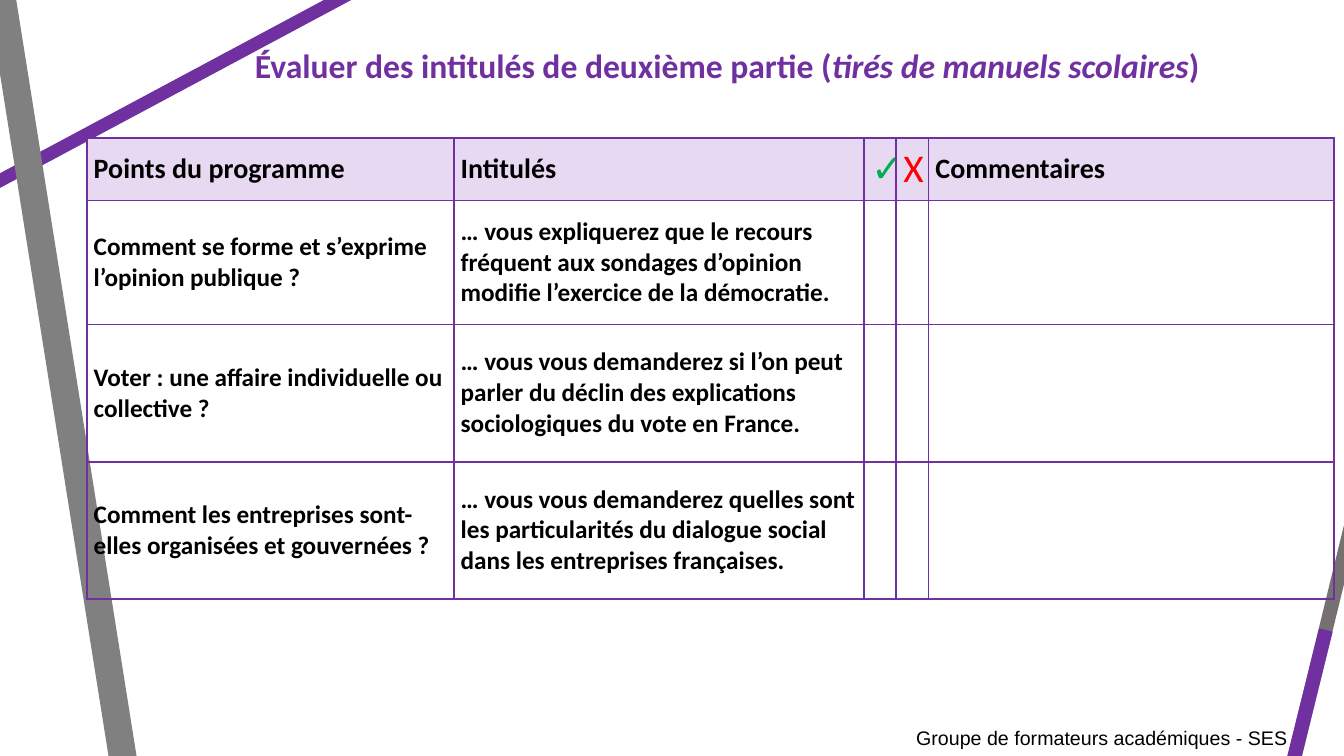
from lxml import etree
from pptx import Presentation
from pptx import util as u
from pptx.dml.color import RGBColor
from pptx.enum import shapes, text
from pptx.oxml import ns

PURPLE = RGBColor(0x70, 0x30, 0xA0)
LILAC = RGBColor(0xE8, 0xD9, 0xF3)
GREY = RGBColor(0x80, 0x80, 0x80)
DARK_GREY = RGBColor(0x76, 0x71, 0x71)
BLACK = RGBColor(0, 0, 0)
GREEN = RGBColor(0x00, 0xB0, 0x50)
RED = RGBColor(0xFF, 0, 0)

TITLE = [
    ("Évaluer des intitulés de deuxième partie (", False),
    ("tirés de manuels scolaires", True),
    (")", False),
]
FOOTER = "Groupe de formateurs académiques - SES"
HEADERS = ["Points du programme", "Intitulés", "✓", "X", "Commentaires"]
ROWS = [
    ("Comment se forme et s’exprime l’opinion publique ?",
     "… vous expliquerez que le recours fréquent aux sondages d’opinion "
     "modifie l’exercice de la démocratie."),
    ("Voter : une affaire individuelle ou collective ?",
     "… vous vous demanderez si l’on peut parler du déclin des explications "
     "sociologiques du vote en France."),
    ("Comment les entreprises sont-elles organisées et gouvernées ?",
     "… vous vous demanderez quelles sont les particularités du dialogue social "
     "dans les entreprises françaises."),
]
MARKS = {
    "✓": dict(size=28, color=GREEN, align=text.PP_ALIGN.CENTER),
    "X": dict(size=28, color=RED, bold=False, align=text.PP_ALIGN.CENTER),
}
COLUMN_WIDTHS = [3.64, 4.07, 0.32, 0.32, 4.02]
ROW_HEIGHTS = [0.62, 1.23, 1.36, 1.36]
STRIPES = [
    ((-2.09, 2.91), (5.16, -0.97), PURPLE, 9.25),
    ((0, -0.14), (1.26, 7.78), GREY, 19.75),
    ((12.26, 9.89), (13.65, 4.19), DARK_GREY, 10),
    ((12.18, 10.15), (13.15, 6.25), PURPLE, 10),
]


def write(para, words, size=18, color=BLACK, bold=True, italic=False,
          font="Calibri", align=None, after=None):
    span = para.add_run()
    span.text = words
    span.font.name = font
    span.font.size = u.Pt(size)
    span.font.bold = bold
    span.font.italic = italic
    span.font.color.rgb = color
    if align is not None:
        para.alignment = align
    if after is not None:
        para.space_after = u.Pt(after)


def add_box(page, left, top, width, height, wrap=True):
    box = page.shapes.add_textbox(*map(u.Inches, (left, top, width, height)))
    box.text_frame.word_wrap = wrap
    box.text_frame.auto_size = text.MSO_AUTO_SIZE.SHAPE_TO_FIT_TEXT
    return box.text_frame.paragraphs[0]


def add_stripe(page, start, end, color, weight):
    stripe = page.shapes.add_connector(
        shapes.MSO_CONNECTOR.STRAIGHT, *map(u.Inches, start + end))
    stripe.line.color.rgb = color
    stripe.line.width = u.Pt(weight)
    etree.SubElement(stripe.element.spPr, ns.qn("a:effectLst"))


def style_cell(cell, header):
    cell.margin_left = cell.margin_right = u.Inches(0.07)
    cell.margin_top = cell.margin_bottom = 0
    cell.vertical_anchor = text.MSO_ANCHOR.MIDDLE
    properties = cell._tc.get_or_add_tcPr()
    for side in ("lnL", "lnR", "lnT", "lnB"):
        border = etree.SubElement(properties, ns.qn("a:" + side), w=str(u.Pt(1.5)))
        solid = etree.SubElement(border, ns.qn("a:solidFill"))
        etree.SubElement(solid, ns.qn("a:srgbClr"), val=str(PURPLE))
    if header:
        cell.fill.solid()
        cell.fill.fore_color.rgb = LILAC
    else:
        cell.fill.background()


def add_grid(page):
    frame = page.shapes.add_table(
        len(ROW_HEIGHTS), len(COLUMN_WIDTHS), u.Inches(0.86), u.Inches(1.37),
        u.Inches(sum(COLUMN_WIDTHS)), u.Inches(sum(ROW_HEIGHTS)))
    table = frame.table
    table.first_row = table.horz_banding = False
    for column, width in zip(table.columns, COLUMN_WIDTHS):
        column.width = u.Inches(width)
    for row, height in zip(table.rows, ROW_HEIGHTS):
        row.height = u.Inches(height)
    for r, row in enumerate(table.rows):
        for cell in row.cells:
            style_cell(cell, header=r == 0)
    for c, heading in enumerate(HEADERS):
        write(table.cell(0, c).text_frame.paragraphs[0], heading,
              **MARKS.get(heading, dict(size=20)))
    for r, row in enumerate(ROWS, 1):
        for c, words in enumerate(row):
            write(table.cell(r, c).text_frame.paragraphs[0], words, after=6)


def main():
    deck = Presentation()
    deck.slide_width, deck.slide_height = u.Inches(13.33), u.Inches(7.5)
    page = deck.slides.add_slide(deck.slide_layouts[6])
    for stripe in STRIPES:
        add_stripe(page, *stripe)
    write(add_box(page, 8.87, 7.15, 4, 0.34, wrap=False), FOOTER, size=14,
          bold=False, font="Arial", align=text.PP_ALIGN.RIGHT)
    title = add_box(page, 2.43, 0.4, 10.71, 0.5)
    for words, italic in TITLE:
        write(title, words, size=24, color=PURPLE, italic=italic)
    add_grid(page)
    deck.save("out.pptx")


if __name__ == "__main__":
    main()
